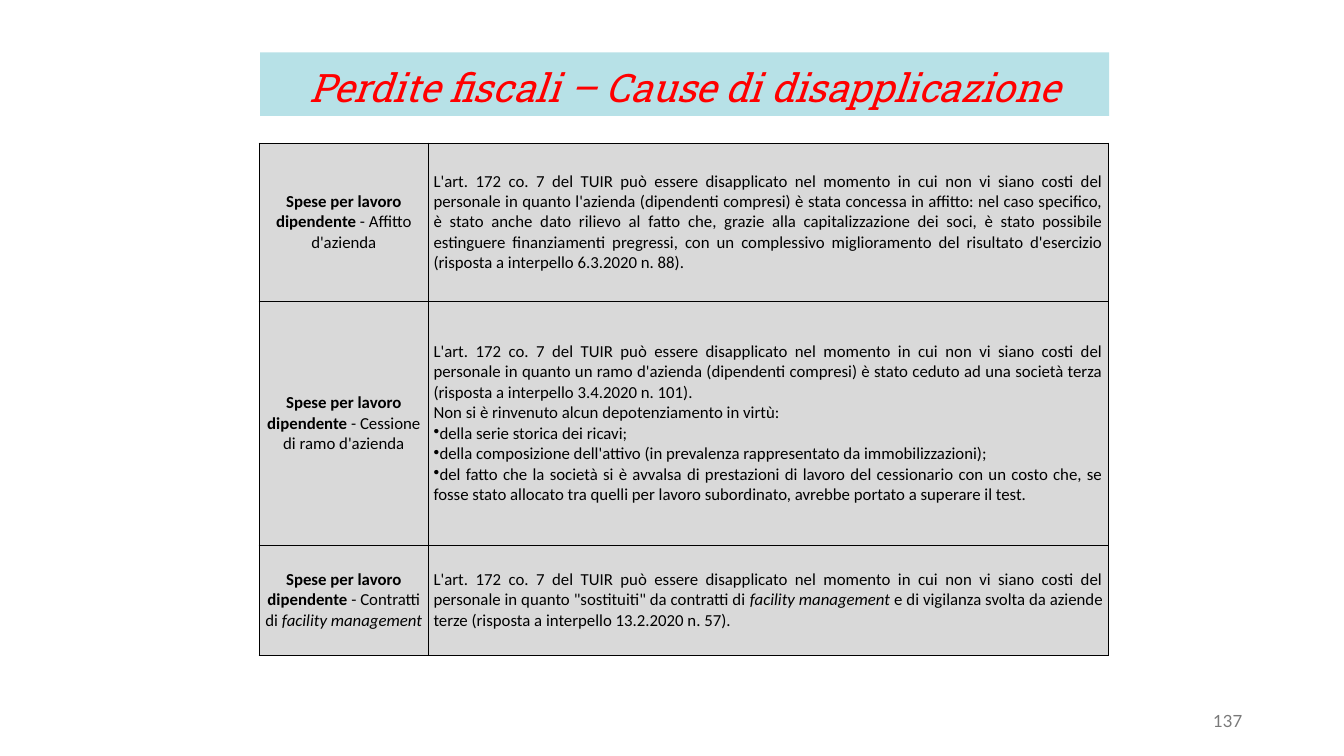
from dataclasses import dataclass

import pptx
import pptx.dml.color
import pptx.enum.text
import pptx.oxml
import pptx.oxml.ns
import pptx.util

PX = 9144  # EMU per px, 100 px to the inch
COLORS = {
    "band": "B7E1E7",
    "title": "FF0000",
    "cell": "D9D9D9",
    "text": "000000",
    "number": "797979",
}
ALIGN = pptx.enum.text.PP_ALIGN
ANCHOR = pptx.enum.text.MSO_ANCHOR


@dataclass
class Span:
    text: str
    bold: bool = False
    italic: bool = False


@dataclass
class Para:
    spans: list[Span]
    bullet: bool = False


@dataclass
class Case:
    height: int
    label: list[Span]
    paras: list[Para]


SUBJECT = Span("Spese per lavoro dipendente ", bold=True)
FACILITY = Span("facility management", italic=True)
PREMISE = (
    "L'art. 172 co. 7 del TUIR può essere disapplicato nel momento in cui "
    "non vi siano costi del personale in quanto "
)
CASES = [
    Case(157, [SUBJECT, Span("- Affitto d'azienda")], [
        Para([Span(
            PREMISE + "l'azienda (dipendenti compresi) è stata concessa in affitto: "
            "nel caso specifico, è stato anche dato rilievo al fatto che, grazie alla "
            "capitalizzazione dei soci, è stato possibile estinguere finanziamenti "
            "pregressi, con un complessivo miglioramento del risultato d'esercizio "
            "(risposta a interpello 6.3.2020 n. 88).")]),
    ]),
    Case(242, [SUBJECT, Span("- Cessione di ramo d'azienda")], [
        Para([Span(
            PREMISE + "un ramo d'azienda (dipendenti compresi) è stato ceduto ad una "
            "società terza (risposta a interpello 3.4.2020 n. 101).")]),
        Para([Span("Non si è rinvenuto alcun depotenziamento in virtù:")]),
        Para([Span("della serie storica dei ricavi;")], bullet=True),
        Para([Span(
            "della composizione dell'attivo (in prevalenza rappresentato da "
            "immobilizzazioni);")], bullet=True),
        Para([Span(
            "del fatto che la società si è avvalsa di prestazioni di lavoro del "
            "cessionario con un costo che, se fosse stato allocato tra quelli per "
            "lavoro subordinato, avrebbe portato a superare il test.")], bullet=True),
    ]),
    Case(109, [SUBJECT, Span("- Contratti di "), FACILITY], [
        Para([
            Span(PREMISE + "\"sostituiti\" da contratti di "),
            FACILITY,
            Span(" e di vigilanza svolta da aziende terze "
                 "(risposta a interpello 13.2.2020 n. 57)."),
        ]),
    ]),
]


def rgb(name: str) -> pptx.dml.color.RGBColor:
    return pptx.dml.color.RGBColor.from_string(COLORS[name])


def set_font(font, family: str, size: int, color: str) -> None:
    font.name = family
    font.size = pptx.util.Pt(size)
    font.color.rgb = rgb(color)


def place(shape, left: int, top: int, width: int, height: int) -> None:
    shape.left, shape.top = left * PX, top * PX
    shape.width, shape.height = width * PX, height * PX


def add_borders(cell) -> None:
    properties = cell._tc.get_or_add_tcPr()
    for side in ("lnL", "lnR", "lnT", "lnB"):
        properties.append(pptx.oxml.parse_xml(
            f'<a:{side} {pptx.oxml.ns.nsdecls("a")} w="{pptx.util.Pt(0.75)}">'
            f'<a:solidFill><a:srgbClr val="{COLORS["text"]}"/></a:solidFill></a:{side}>'))


def add_bullet(paragraph) -> None:
    properties = paragraph._p.get_or_add_pPr()
    properties.set("marL", "0")
    properties.set("indent", "0")
    properties.append(pptx.oxml.parse_xml(
        f'<a:buChar {pptx.oxml.ns.nsdecls("a")} char="•"/>'))


def fill_cell(cell, paras: list[Para], align: ALIGN) -> None:
    add_borders(cell)
    cell.fill.solid()
    cell.fill.fore_color.rgb = rgb("cell")
    cell.vertical_anchor = ANCHOR.MIDDLE
    cell.margin_left = cell.margin_right = 5 * PX
    cell.margin_top = cell.margin_bottom = 16 * PX
    frame = cell.text_frame
    for index, para in enumerate(paras):
        paragraph = frame.add_paragraph() if index else frame.paragraphs[0]
        paragraph.alignment = align
        if para.bullet:
            add_bullet(paragraph)
        for span in para.spans:
            run = paragraph.add_run()
            run.text = span.text
            set_font(run.font, "Calibri", 12, "text")
            run.font.bold, run.font.italic = span.bold, span.italic


def add_title(page) -> None:
    title = page.shapes.title
    place(title, 258, 52, 842, 63)
    title.fill.solid()
    title.fill.fore_color.rgb = rgb("band")
    frame = title.text_frame
    frame.text = "Perdite fiscali – Cause di disapplicazione"
    frame.auto_size = pptx.enum.text.MSO_AUTO_SIZE.NONE
    frame.vertical_anchor = ANCHOR.BOTTOM
    paragraph = frame.paragraphs[0]
    paragraph.alignment = ALIGN.CENTER
    paragraph.line_spacing = 0.9
    font = paragraph.runs[0].font
    set_font(font, "Roboto Slab", 28, "title")
    font.italic = True


def add_cases(page) -> None:
    widths = (168, 674)
    height = sum(case.height for case in CASES)
    table = page.shapes.add_table(
        len(CASES), len(widths), 257 * PX, 142 * PX, sum(widths) * PX, height * PX).table
    table.first_row = table.horz_banding = False
    for column, width in zip(table.columns, widths):
        column.width = width * PX
    for row, case in zip(table.rows, CASES):
        row.height = case.height * PX
        fill_cell(row.cells[0], [Para(case.label)], ALIGN.CENTER)
        fill_cell(row.cells[1], case.paras, ALIGN.JUSTIFY)


def add_page_number(page) -> None:
    box = page.shapes.add_textbox(942 * PX, 695 * PX, 300 * PX, 40 * PX)
    frame = box.text_frame
    frame.word_wrap = True
    frame.vertical_anchor = ANCHOR.MIDDLE
    frame.text = "137"
    paragraph = frame.paragraphs[0]
    paragraph.alignment = ALIGN.RIGHT
    set_font(paragraph.runs[0].font, "Lato", 12, "number")


def main() -> None:
    deck = pptx.Presentation()
    deck.slide_width, deck.slide_height = 1333 * PX, 750 * PX
    page = deck.slides.add_slide(deck.slide_layouts.get_by_name("Title Only"))
    add_title(page)
    add_page_number(page)
    add_cases(page)
    deck.save("out.pptx")


if __name__ == "__main__":
    main()
